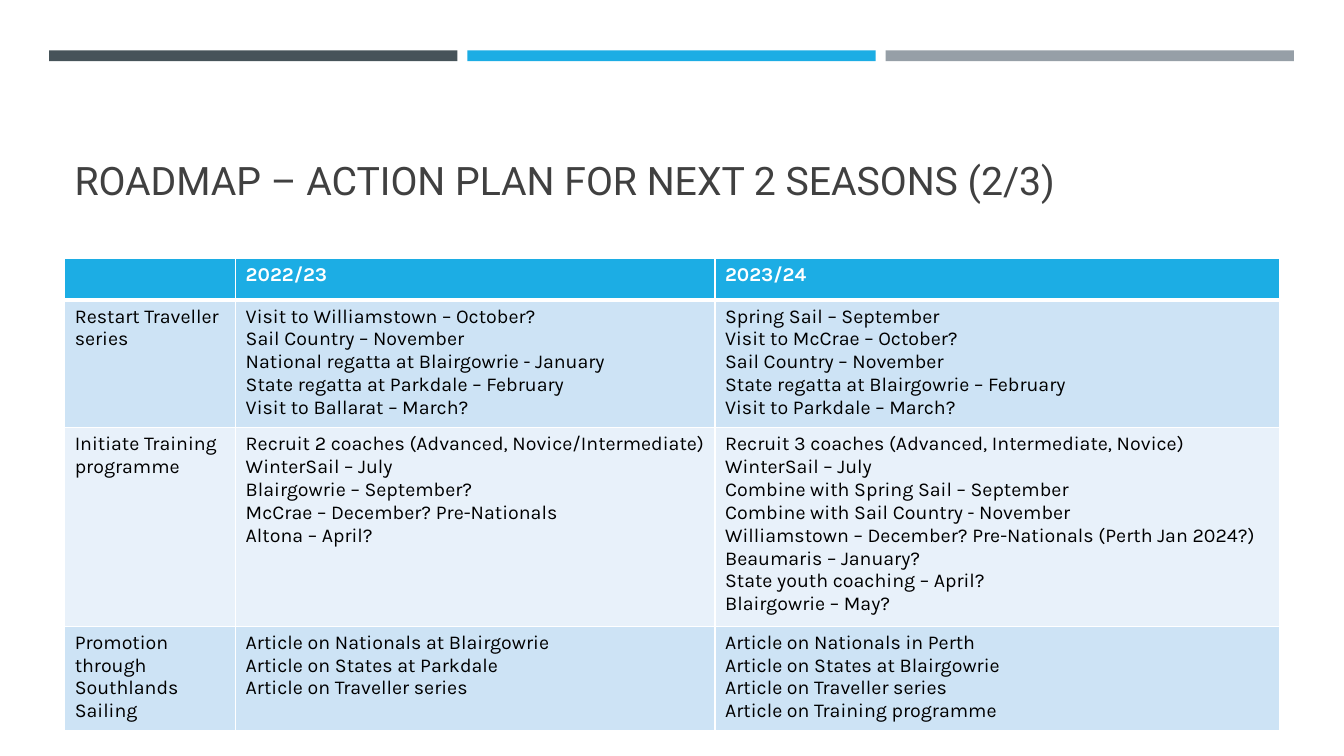
from lxml.etree import SubElement
from pptx import Presentation
from pptx.dml.color import RGBColor
from pptx.enum.shapes import MSO_SHAPE as Shape
from pptx.enum.text import MSO_ANCHOR as Anchor
from pptx.oxml.ns import qn
from pptx.util import Cm, Pt

WHITE, BLACK, BLUE = "FFFFFF", "000000", "1CADE4"
BAR_COLOURS = ["465359", BLUE, "969FA7"]
BAND_COLOURS = ["CDE3F5", "E8F1FA"]
COL_WIDTHS = [4.31, 12.08, 14.24]
ROW_HEIGHTS = [1.04, 3.1, 4.87, 2.54]

ROADMAP = [
    [[], ["2022/23"], ["2023/24"]],
    [
        ["Restart Traveller series"],
        [
            "Visit to Williamstown – October?",
            "Sail Country – November",
            "National regatta at Blairgowrie - January",
            "State regatta at Parkdale – February",
            "Visit to Ballarat – March?",
        ],
        [
            "Spring Sail – September",
            "Visit to McCrae – October?",
            "Sail Country – November",
            "State regatta at Blairgowrie – February",
            "Visit to Parkdale – March?",
        ],
    ],
    [
        ["Initiate Training programme"],
        [
            "Recruit 2 coaches (Advanced, Novice/Intermediate)",
            "WinterSail – July",
            "Blairgowrie – September?",
            "McCrae – December? Pre-Nationals",
            "Altona – April?",
        ],
        [
            "Recruit 3 coaches (Advanced, Intermediate, Novice)",
            "WinterSail – July",
            "Combine with Spring Sail – September",
            "Combine with Sail Country - November",
            "Williamstown – December? Pre-Nationals (Perth Jan 2024?)",
            "Beaumaris – January?",
            "State youth coaching – April?",
            "Blairgowrie – May?",
        ],
    ],
    [
        ["Promotion through Southlands Sailing"],
        [
            "Article on Nationals at Blairgowrie",
            "Article on States at Parkdale",
            "Article on Traveller series",
        ],
        [
            "Article on Nationals in Perth",
            "Article on States at Blairgowrie",
            "Article on Traveller series",
            "Article on Training programme",
        ],
    ],
]


def rgb(colour):
    return RGBColor.from_string(colour)


def fill_solid(fill, colour):
    fill.solid()
    fill.fore_color.rgb = rgb(colour)


def write_lines(tf, lines, font, size, colour, bold=False):
    for i, line in enumerate(lines):
        p = tf.paragraphs[0] if i == 0 else tf.add_paragraph()
        p.text = line
        p.font.name, p.font.size, p.font.bold = font, Pt(size), bold
        p.font.color.rgb = rgb(colour)


def add_bar(s, left, colour):
    sp = s.shapes.add_shape(Shape.RECTANGLE, Cm(left), Cm(1.27), Cm(10.29), Cm(0.27))
    sp.shadow.inherit = False
    fill_solid(sp.fill, colour)
    sp.line.fill.background()


def add_title(s, text):
    sp = s.shapes.add_textbox(Cm(1.63), Cm(1.96), Cm(30.63), Cm(3.3))
    tf = sp.text_frame
    tf.word_wrap = True
    tf.vertical_anchor = Anchor.BOTTOM
    write_lines(tf, [text], "Roboto", 28, "404040")


def set_borders(cell, widths):
    """Draw white cell borders; widths maps each side (L, R, T, B) to points."""
    tc_pr = cell._tc.get_or_add_tcPr()
    for side, width in widths.items():
        ln = SubElement(tc_pr, qn(f"a:ln{side}"), w=str(Pt(width)))
        solid = SubElement(ln, qn("a:solidFill"))
        SubElement(solid, qn("a:srgbClr"), val=WHITE)


def fill_cell(cell, lines, row):
    header = row == 0
    set_borders(cell, {"L": 1, "R": 1, "T": 3 if row == 1 else 1, "B": 3 if header else 1})
    fill_solid(cell.fill, BLUE if header else BAND_COLOURS[(row - 1) % 2])
    write_lines(cell.text_frame, lines, "Karla", 14, WHITE if header else BLACK, header)


def add_roadmap(s):
    frame = s.shapes.add_table(
        len(ROADMAP), len(COL_WIDTHS), Cm(1.63), Cm(6.52),
        Cm(sum(COL_WIDTHS)), Cm(sum(ROW_HEIGHTS)))
    table = frame.table
    for column, width in zip(table.columns, COL_WIDTHS):
        column.width = Cm(width)
    for r, (height, cells) in enumerate(zip(ROW_HEIGHTS, ROADMAP)):
        table.rows[r].height = Cm(height)
        for c, lines in enumerate(cells):
            fill_cell(table.cell(r, c), lines, r)


def main():
    prs = Presentation()
    prs.slide_width, prs.slide_height = Cm(33.87), Cm(19.05)
    s = prs.slides.add_slide(prs.slide_layouts[6])

    # Coloured bars across the top
    for i, colour in enumerate(BAR_COLOURS):
        add_bar(s, 1.24 + i * 10.54, colour)

    # Title and action plan
    add_title(s, "ROADMAP – ACTION PLAN FOR NEXT 2 SEASONS (2/3)")
    add_roadmap(s)

    prs.save("out.pptx")


if __name__ == "__main__":
    main()
